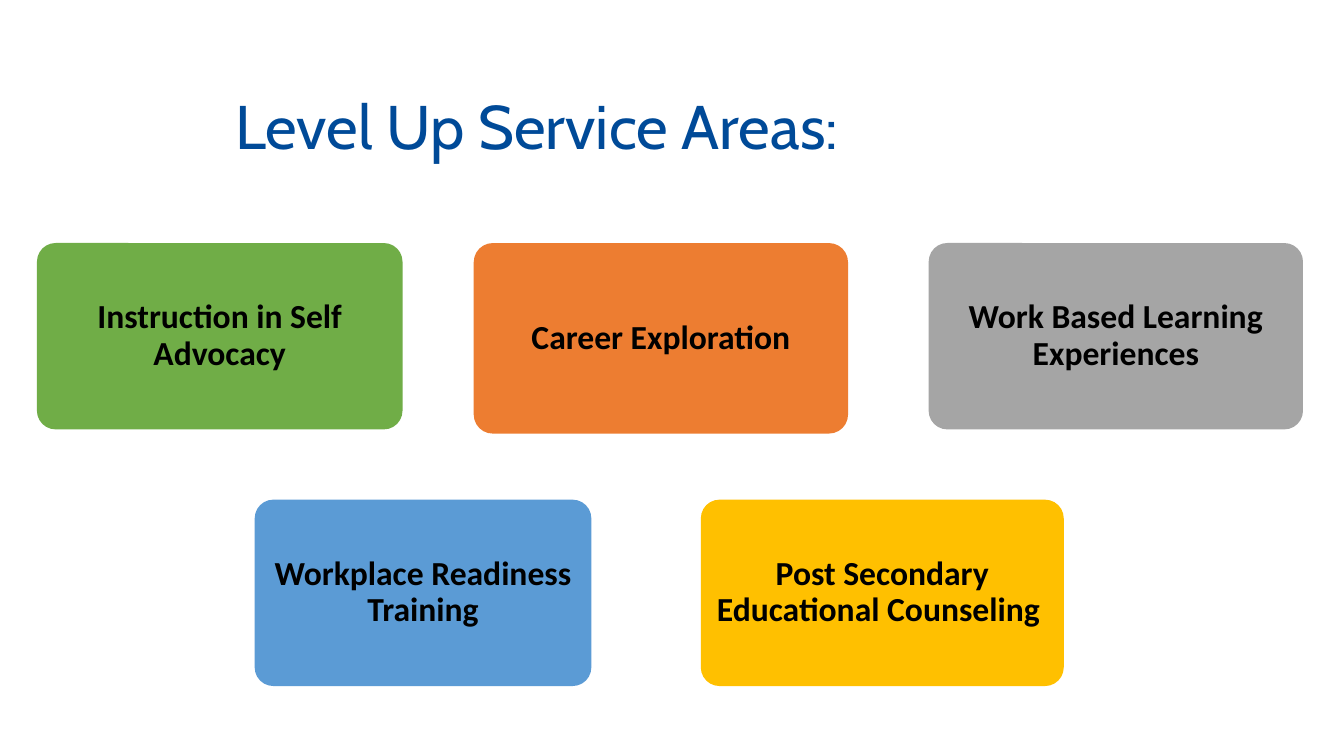
from pptx import Presentation
from pptx.dml.color import RGBColor
from pptx.enum.shapes import MSO_SHAPE as Shape
from pptx.enum.text import MSO_ANCHOR as Anchor, MSO_AUTO_SIZE as AutoSize, PP_ALIGN as Align
from pptx.util import Inches, Pt

COLORS = {
    "title": "004A98",
    "text": "000000",
    "green": "70AD47",
    "orange": "ED7D31",
    "gray": "A5A5A5",
    "blue": "5B9BD5",
    "gold": "FFC000",
}
TOP_ROW, BOTTOM_ROW = 32.15, 66.1
CARD_HEIGHT = 24.65
SERVICE_AREAS = [
    ("Career Exploration", "orange", 35.25, TOP_ROW, 27.85, 25.2),
    ("Work Based Learning Experiences", "gray", 69.1, TOP_ROW, 27.85, CARD_HEIGHT),
    ("Post Secondary Educational Counseling ", "gold", 52.15, BOTTOM_ROW, 27, CARD_HEIGHT),
    ("Workplace Readiness Training", "blue", 18.95, BOTTOM_ROW, 25.05, CARD_HEIGHT),
    ("Instruction in Self Advocacy", "green", 2.75, TOP_ROW, 27.2, CARD_HEIGHT),
]


class ServiceSlide:
    """Draws styled elements on one slide, placed in percent of its size."""

    def __init__(self, presentation):
        self.width = presentation.slide_width
        self.height = presentation.slide_height
        self.slide = presentation.slides.add_slide(presentation.slide_layouts[5])

    def box(self, left, top, width, height):
        return (int(self.width * left / 100), int(self.height * top / 100),
                int(self.width * width / 100), int(self.height * height / 100))

    def label(self, shape, text, font, size, color, align, bold=False):
        frame = shape.text_frame
        frame.text = text
        frame.word_wrap = True
        frame.auto_size = AutoSize.NONE
        frame.vertical_anchor = Anchor.MIDDLE
        paragraph = frame.paragraphs[0]
        paragraph.alignment = align
        paragraph.line_spacing = 0.9
        paragraph.font.name = font
        paragraph.font.size = Pt(size)
        paragraph.font.bold = bold
        paragraph.font.color.rgb = RGBColor.from_string(COLORS[color])

    def title(self, text, left, top, width, height):
        shape = self.slide.shapes.title
        shape.left, shape.top, shape.width, shape.height = self.box(left, top, width, height)
        self.label(shape, text, "Cabin", 44, "title", Align.LEFT)

    def card(self, text, color, left, top, width, height):
        shape = self.slide.shapes.add_shape(
            Shape.ROUNDED_RECTANGLE, *self.box(left, top, width, height))
        shape.adjustments[0] = 0.1
        shape.shadow.inherit = False
        shape.fill.solid()
        shape.fill.fore_color.rgb = RGBColor.from_string(COLORS[color])
        shape.line.fill.background()
        frame = shape.text_frame
        frame.margin_left = frame.margin_right = Inches(0.04)
        frame.margin_top = frame.margin_bottom = Inches(0.04)
        self.label(shape, text, "Calibri", 24, "text", Align.CENTER, bold=True)


def main():
    presentation = Presentation()
    presentation.slide_width = Inches(13.33)
    presentation.slide_height = Inches(7.5)
    slide = ServiceSlide(presentation)
    slide.title("Level Up Service Areas:", 16.75, 7.45, 54.7, 19.35)
    for service_area in SERVICE_AREAS:
        slide.card(*service_area)
    presentation.save("out.pptx")


if __name__ == "__main__":
    main()
